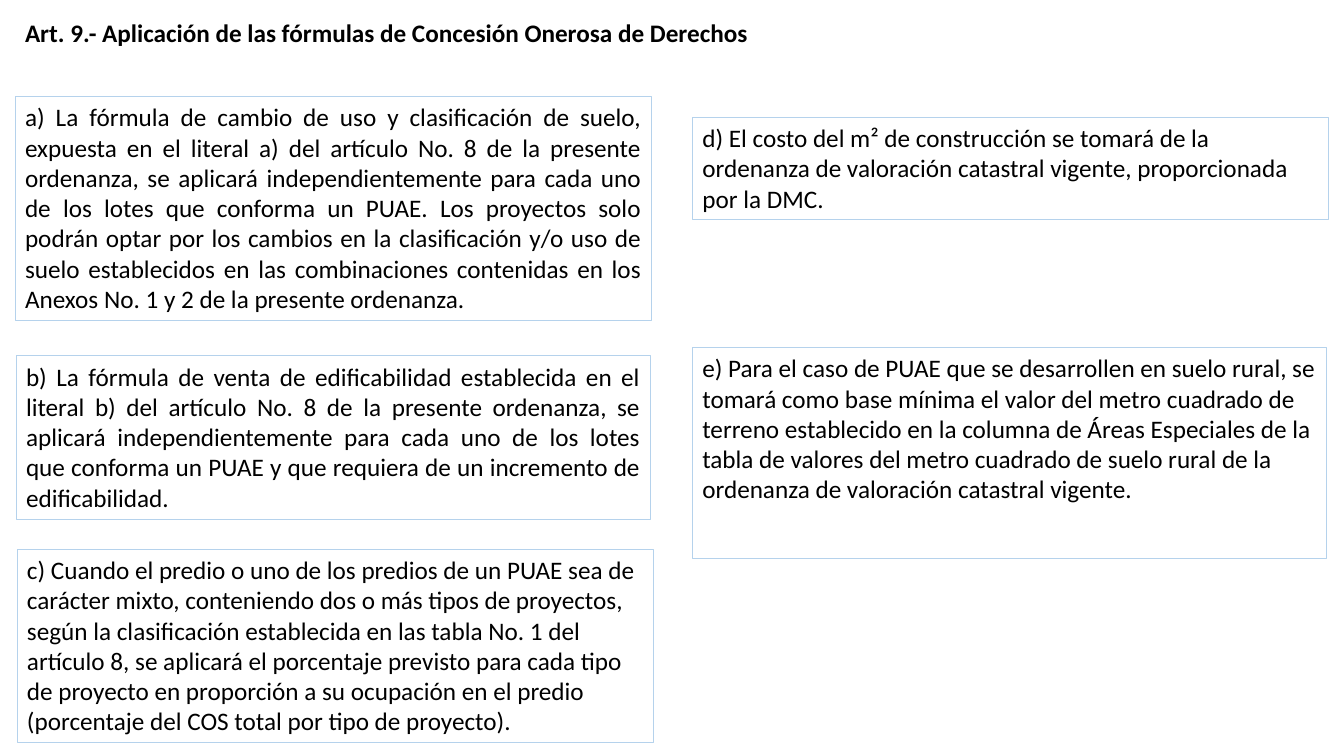
import pptx
import pptx.util
import pptx.dml.color
import pptx.enum.shapes
import pptx.enum.text

Pt = pptx.util.Pt
ALIGN = pptx.enum.text.PP_ALIGN


def color(hex_code):
    return pptx.dml.color.RGBColor.from_string(hex_code)


def write(frame, text, align=ALIGN.LEFT, bold=False):
    frame.text = text
    paragraph = frame.paragraphs[0]
    paragraph.alignment = align
    font = paragraph.runs[0].font
    font.name = "Calibri"
    font.size = Pt(18)
    font.bold = bold
    font.color.rgb = color("000000")


deck = pptx.Presentation()
deck.slide_width = Pt(960)
deck.slide_height = Pt(540)
slide = deck.slides.add_slide(deck.slide_layouts[6])

# Article heading
heading = slide.shapes.add_textbox(Pt(10.8), Pt(8.7), Pt(535.7), Pt(29))
heading.text_frame.word_wrap = False
heading.text_frame.auto_size = pptx.enum.text.MSO_AUTO_SIZE.SHAPE_TO_FIT_TEXT
write(heading.text_frame,
      "Art. 9.- Aplicación de las fórmulas de Concesión Onerosa de Derechos",
      bold=True)

# Clauses: left, top, width, height, alignment, text
clauses = [
    (10.8, 69.1, 454.3, 159.9, ALIGN.JUSTIFY,
     "a) La fórmula de cambio de uso y clasificación de suelo, expuesta en el "
     "literal a) del artículo No. 8 de la presente ordenanza, se aplicará "
     "independientemente para cada uno de los lotes que conforma un PUAE. Los "
     "proyectos solo podrán optar por los cambios en la clasificación y/o uso de "
     "suelo establecidos en las combinaciones contenidas en los Anexos No. 1 y 2 "
     "de la presente ordenanza."),
    (11.5, 254.2, 452.9, 116.6, ALIGN.JUSTIFY,
     "b) La fórmula de venta de edificabilidad establecida en el literal b) del "
     "artículo No. 8 de la presente ordenanza, se aplicará independientemente "
     "para cada uno de los lotes que conforma un PUAE y que requiera de un "
     "incremento de edificabilidad."),
    (12.2, 392.4, 454.3, 138.2, ALIGN.LEFT,
     "c) Cuando el predio o uno de los predios de un PUAE sea de carácter mixto, "
     "conteniendo dos o más tipos de proyectos, según la clasificación "
     "establecida en las tabla No. 1 del artículo 8, se aplicará el porcentaje "
     "previsto para cada tipo de proyecto en proporción a su ocupación en el "
     "predio (porcentaje del COS total por tipo de proyecto)."),
    (494.6, 84, 454.3, 72.7, ALIGN.LEFT,
     "d) El costo del m² de construcción se tomará de la ordenanza de valoración "
     "catastral vigente, proporcionada por la DMC."),
    (494.6, 248.4, 452.9, 150.5, ALIGN.LEFT,
     "e) Para el caso de PUAE que se desarrollen en suelo rural, se tomará como "
     "base mínima el valor del metro cuadrado de terreno establecido en la "
     "columna de Áreas Especiales de la tabla de valores del metro cuadrado de "
     "suelo rural de la ordenanza de valoración catastral vigente."),
]
for left, top, width, height, align, text in clauses:
    clause = slide.shapes.add_shape(pptx.enum.shapes.MSO_SHAPE.RECTANGLE,
                                    Pt(left), Pt(top), Pt(width), Pt(height))
    clause.shadow.inherit = False
    clause.fill.background()
    clause.line.color.rgb = color("B5D2EC")
    clause.line.width = Pt(0.75)
    clause.text_frame.word_wrap = True
    clause.text_frame.vertical_anchor = pptx.enum.text.MSO_ANCHOR.TOP
    write(clause.text_frame, text, align)

deck.save("out.pptx")
